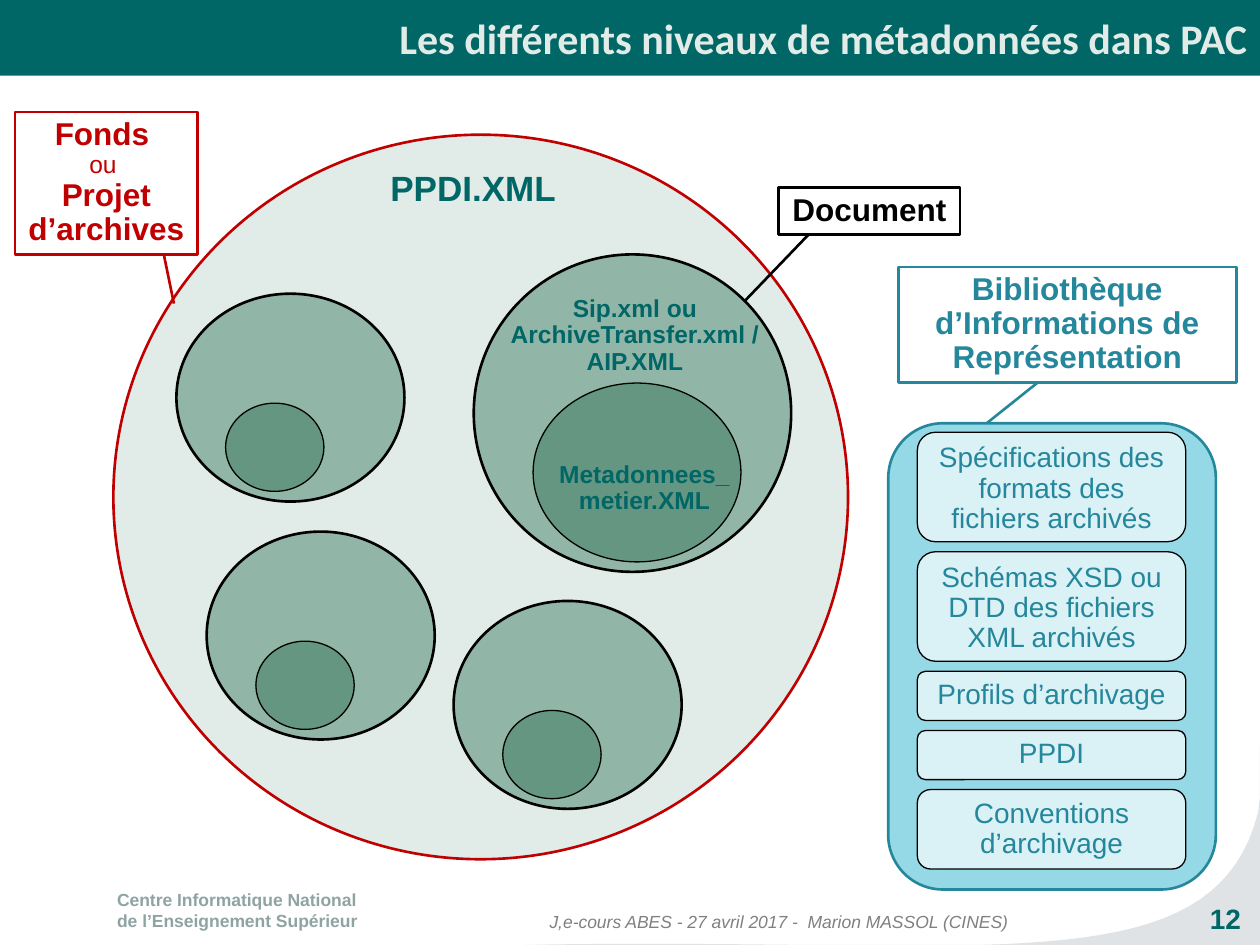
"""Build the slide on metadata levels in the PAC archive."""
from dataclasses import dataclass

from lxml import etree
from pptx import Presentation
from pptx import util as u
from pptx.dml.color import RGBColor
from pptx.enum import shapes, text
from pptx.oxml.ns import qn

SH = shapes.MSO_SHAPE
AL = text.PP_ALIGN
AN = text.MSO_ANCHOR


@dataclass(frozen=True)
class Theme:
    teal: str = "006666"
    pale: str = "E1EBE7"
    mid: str = "91B5A6"
    deep: str = "649681"
    red: str = "C00000"
    black: str = "000000"
    blue: str = "25879B"
    sky: str = "96D9E6"
    ice: str = "DAF1F6"
    footer: str = "8FA3A3"
    grey: str = "808080"
    swoosh: str = "687C86"
    sans: str = "Arial"
    heading: str = "Calibri"
    title: float = 24
    large: float = 20
    label: float = 18
    card: float = 16
    body: float = 14
    small: float = 10
    thick: float = 1.5
    thin: float = 0.75


T = Theme()


@dataclass(frozen=True)
class Box:
    x: float
    y: float
    w: float
    h: float

    def lengths(self) -> list[u.Length]:
        return [u.Pt(v) for v in (self.x, self.y, self.w, self.h)]


@dataclass(frozen=True)
class Run:
    words: str
    size: float
    color: str
    bold: bool = False
    italic: bool = False
    font: str = T.sans


@dataclass(frozen=True)
class Card:
    words: str
    height: float


@dataclass(frozen=True)
class Point:
    x: float
    y: float


def rgb(color: str) -> RGBColor:
    return RGBColor.from_string(color)


def write(sp, runs: list[Run], align=AL.CENTER, spacing: float = 0.9,
          anchor=AN.TOP, wrap: bool = True) -> None:
    """Write one paragraph per run."""
    tf = sp.text_frame
    tf.word_wrap = wrap
    tf.vertical_anchor = anchor
    for i, run in enumerate(runs):
        p = tf.add_paragraph() if i else tf.paragraphs[0]
        p.alignment, p.line_spacing = align, spacing
        r = p.add_run()
        r.text = run.words
        f = r.font
        f.name, f.size, f.bold, f.italic = run.font, u.Pt(run.size), run.bold, run.italic
        f.color.rgb = rgb(run.color)


def add_text(s, box: Box, *runs: Run, **layout) -> None:
    """Add a text box."""
    write(s.shapes.add_textbox(*box.lengths()), list(runs), **layout)


def add_shape(s, kind, box: Box, fill: str = "", line: str = "", width: float = T.thick):
    """Add a preset shape with optional fill and outline."""
    sp = s.shapes.add_shape(kind, *box.lengths())
    sp.shadow.inherit = False
    if fill:
        sp.fill.solid()
        sp.fill.fore_color.rgb = rgb(fill)
    else:
        sp.fill.background()
    if line:
        sp.line.color.rgb = rgb(line)
        sp.line.width = u.Pt(width)
    else:
        sp.line.fill.background()
    return sp


def add_label(s, box: Box, color: str, *runs: Run, wrap: bool = True) -> None:
    """Add an outlined label."""
    write(add_shape(s, SH.RECTANGLE, box, line=color), list(runs), wrap=wrap)


def add_line(s, a: Point, b: Point, color: str) -> None:
    """Add a straight leader line."""
    c = s.shapes.add_connector(shapes.MSO_CONNECTOR.STRAIGHT,
                               *[u.Pt(v) for v in (a.x, a.y, b.x, b.y)])
    c.line.color.rgb = rgb(color)
    c.line.width = u.Pt(T.thick)
    etree.SubElement(c._element.spPr, qn("a:effectLst"))


def add_swoosh(s, steps: int = 40) -> None:
    """Add the translucent corner, sampled from a cubic curve and kept on the slide."""
    a, b, c, d = Point(723.6, 426), Point(720.7, 572.4), Point(589.7, 534.2), Point(299.5, 540)
    points = []
    for t in (i / steps for i in range(steps + 1)):
        k = (1 - t) ** 3, 3 * t * (1 - t) ** 2, 3 * t * t * (1 - t), t ** 3
        x, y = (sum(w * v for w, v in zip(k, vs))
                for vs in ((a.x, b.x, c.x, d.x), (a.y, b.y, c.y, d.y)))
        points.append((u.Pt(min(x, 720)), u.Pt(min(y, 540))))
    fb = s.shapes.build_freeform(*points[0])
    fb.add_line_segments(points[1:] + [(u.Pt(720), u.Pt(540))], close=True)
    sp = fb.convert_to_shape()
    sp.shadow.inherit = False
    sp.line.fill.background()
    sp.fill.solid()
    sp.fill.fore_color.rgb = rgb(T.swoosh)
    color = sp._element.spPr.find(qn("a:solidFill"))[0]
    etree.SubElement(color, qn("a:alpha")).set("val", "21000")


def add_frame(s) -> None:
    """Add the title band and the footer."""
    add_shape(s, SH.RECTANGLE, Box(0, 0, 720, 43.2), T.teal)
    add_text(s, Box(59.8, 504.7, 157, 35.3),
             Run("Centre Informatique National de l’Enseignement Supérieur",
                 T.small, T.footer, True), align=AL.LEFT, spacing=1.0)
    add_swoosh(s)
    add_text(s, Box(677.5, 514, 45.4, 24.5), Run("12", T.card, T.teal, True))
    add_text(s, Box(223.9, 518.4, 442.1, 18),
             Run("J,e-cours ABES - 27 avril 2017 -  Marion MASSOL (CINES)",
                 T.small, T.grey, italic=True))
    add_text(s, Box(108, 0, 612, 43.2),
             Run("Les différents niveaux de métadonnées dans PAC", T.title, T.pale, True,
                 font=T.heading), align=AL.RIGHT, spacing=1.0, anchor=AN.MIDDLE)


def add_collection(s) -> None:
    """Add the collection circle with its nested documents."""
    add_shape(s, SH.OVAL, Box(64.8, 77, 419.8, 414), T.pale, T.red)
    add_label(s, Box(8.6, 64.1, 104.4, 81.4), T.red,
              Run("Fonds ", T.label, T.red, True), Run("ou ", T.body, T.red),
              Run("Projet d’archives", T.label, T.red, True))
    add_line(s, Point(99.4, 173.5), Point(93.6, 145.4), T.red)
    add_text(s, Box(215.3, 94.3, 110.2, 28.8), Run("PPDI.XML", T.large, T.teal, True), wrap=False)
    add_label(s, Box(445, 107.3, 103.7, 26.6), T.black,
              Run("Document", T.label, T.black, True), wrap=False)
    add_line(s, Point(425.5, 172.1), Point(462.2, 133.9), T.black)
    documents = [(Box(270.7, 145.4, 181.4, 181.4), Box(304.6, 218.9, 118.8, 102.2))]
    documents += [(Box(x, y, 130.3, 118.8), Box(x + 28.1, y + 62.6, 56.2, 50.4))
                  for x, y in ((100.8, 167.8), (118.1, 303.8), (259.2, 343.4))]
    for outer, inner in documents:
        add_shape(s, SH.OVAL, outer, T.mid, T.black)
        add_shape(s, SH.OVAL, inner, T.deep, T.black, T.thin)
    add_text(s, Box(308.2, 260.6, 120.2, 38.2),
             Run("Metadonnees_metier.XML", T.body, T.teal, True))
    add_text(s, Box(275, 165.6, 175.7, 53.3),
             Run("Sip.xml ou ArchiveTransfer.xml / AIP.XML", T.body, T.teal, True))


def add_library(s) -> None:
    """Add the representation library and its stacked cards."""
    add_shape(s, SH.ROUNDED_RECTANGLE, Box(507.6, 241.9, 187.2, 266.4), T.sky, T.blue)
    add_label(s, Box(513.4, 152.6, 193, 66.2), T.blue,
              Run("Bibliothèque d’Informations de Représentation", T.label, T.blue, True))
    add_line(s, Point(592.6, 218.9), Point(563.8, 241.9), T.blue)
    y, gap = 247, 5.7
    for card in (Card("Spécifications des formats des fichiers archivés", 62.6),
                 Card("Schémas XSD ou DTD des fichiers XML archivés", 62.6),
                 Card("Profils d’archivage", 28.1), Card("PPDI", 28.1),
                 Card("Conventions d’archivage", 45.4)):
        sp = add_shape(s, SH.ROUNDED_RECTANGLE, Box(524.2, y, 153.4, card.height),
                       T.ice, T.black, T.thin)
        write(sp, [Run(card.words, T.card, T.blue)])
        y += card.height + gap


def main() -> None:
    prs = Presentation()
    prs.slide_width, prs.slide_height = u.Pt(720), u.Pt(540)
    s = prs.slides.add_slide(prs.slide_layouts[6])
    add_frame(s)
    add_collection(s)
    add_library(s)
    prs.save("out.pptx")


if __name__ == "__main__":
    main()
